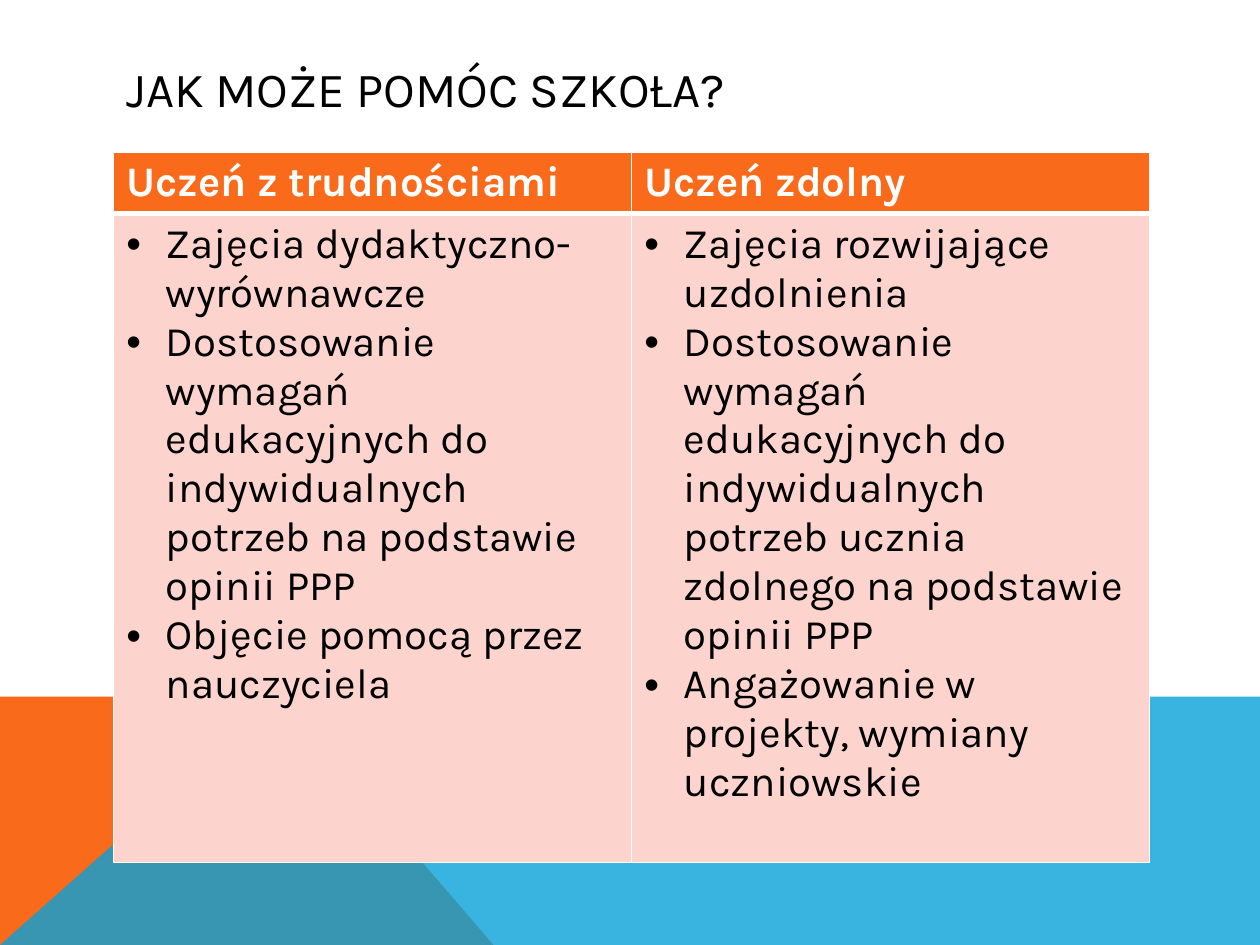
from lxml.etree import SubElement
from pptx import Presentation
from pptx.dml.color import RGBColor
from pptx.enum.text import MSO_ANCHOR, MSO_AUTO_SIZE, PP_ALIGN
from pptx.oxml.ns import qn
from pptx.util import Pt

COLORS = {
    "orange": "F96A1B",
    "blue": "08A1D9",
    "pink": "FDD4CD",
    "white": "FFFFFF",
    "black": "000000",
}


def format_font(font, size, color, bold=False):
    values = {"name": "Karla", "size": Pt(size), "bold": bold}
    for name, value in values.items():
        setattr(font, name, value)
    font.color.rgb = RGBColor.from_string(COLORS[color])


def add_border(cell, side, width):
    properties = cell._tc.get_or_add_tcPr()
    line = SubElement(properties, qn(f"a:{side}"), w=str(Pt(width)))
    fill = SubElement(line, qn("a:solidFill"))
    SubElement(fill, qn("a:srgbClr"), val=COLORS["white"])


presentation = Presentation()
presentation.slide_width = Pt(720)
presentation.slide_height = Pt(540)
slide = presentation.slides.add_slide(presentation.slide_layouts[5])

bands = [
    ("orange", None, [(0, 540), (0, 397.5), (160.5, 397.5), (281.5, 540)]),
    ("blue", 80, [(0, 540), (160.5, 397.5), (720, 398), (720, 540)]),
]
for color, opacity, points in bands:
    builder = slide.shapes.build_freeform(*points[0], scale=Pt(1))
    builder.add_line_segments(points[1:], close=True)
    shape = builder.convert_to_shape()
    shape.shadow.inherit = False
    shape.line.fill.background()
    shape.fill.solid()
    shape.fill.fore_color.rgb = RGBColor.from_string(COLORS[color])
    if opacity:
        color_element = shape.element.spPr.find(qn("a:solidFill"))[0]
        SubElement(color_element, qn("a:alpha"), val=str(opacity * 1000))

title = slide.shapes.title
slide.shapes.element.append(title.element)
title_box = {"left": 65, "top": 29, "width": 592, "height": 43}
for name, value in title_box.items():
    setattr(title, name, Pt(value))
title.text = "JAK MOŻE POMÓC SZKOŁA?"
title_frame = {
    "vertical_anchor": MSO_ANCHOR.MIDDLE,
    "auto_size": MSO_AUTO_SIZE.NONE,
    "word_wrap": True,
}
for name, value in title_frame.items():
    setattr(title.text_frame, name, value)
title_paragraph = title.text_frame.paragraphs[0]
title_paragraph.alignment = PP_ALIGN.LEFT
format_font(title_paragraph.runs[0].font, 28, "black")

columns = [
    ("Uczeń z trudnościami", [
        "Zajęcia dydaktyczno-wyrównawcze",
        "Dostosowanie wymagań edukacyjnych do indywidualnych potrzeb "
        "na podstawie opinii PPP",
        "Objęcie pomocą przez nauczyciela",
    ]),
    ("Uczeń zdolny", [
        "Zajęcia rozwijające uzdolnienia",
        "Dostosowanie wymagań edukacyjnych do indywidualnych potrzeb "
        "ucznia zdolnego na podstawie opinii PPP",
        "Angażowanie w projekty, wymiany uczniowskie",
    ]),
]
row_heights = [35, 371]
table = slide.shapes.add_table(
    2, 2, Pt(65), Pt(86.75), Pt(592), Pt(sum(row_heights))
).table
for row, height in zip(table.rows, row_heights):
    row.height = Pt(height)

for column_index, (heading, measures) in enumerate(columns):
    table.columns[column_index].width = Pt(296)
    rows = [
        ([heading], "orange", "white", 3, 3),
        (measures, "pink", "black", 3, 1),
    ]
    for row_index, (texts, fill, color, top, bottom) in enumerate(rows):
        cell = table.cell(row_index, column_index)
        is_heading = row_index == 0
        cell.text = "\n".join(texts)
        for paragraph in cell.text_frame.paragraphs:
            format_font(paragraph.runs[0].font, 24, color, is_heading)
            if not is_heading:
                properties = paragraph._p.get_or_add_pPr()
                properties.set("marL", str(Pt(22.5)))
                properties.set("indent", str(Pt(-22.5)))
                SubElement(properties, qn("a:buFont"), typeface="Arial")
                SubElement(properties, qn("a:buChar"), char="•")
        borders = {"lnL": 1, "lnR": 1, "lnT": 1 if is_heading else top, "lnB": bottom}
        for side, width in borders.items():
            add_border(cell, side, width)
        cell.fill.solid()
        cell.fill.fore_color.rgb = RGBColor.from_string(COLORS[fill])

presentation.save("out.pptx")
